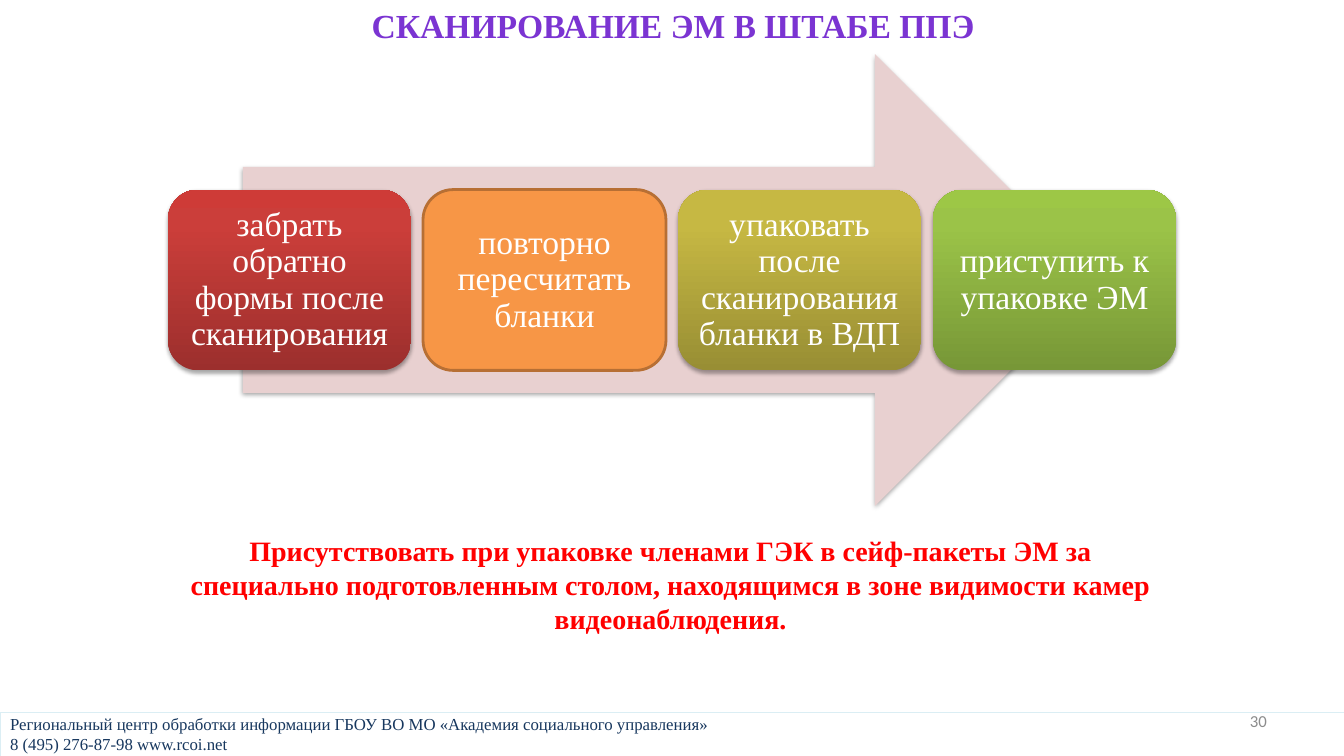
from copy import deepcopy

from lxml import etree
from pptx import Presentation
from pptx.dml.color import RGBColor
from pptx.enum.shapes import MSO_SHAPE
from pptx.enum.text import MSO_ANCHOR, MSO_AUTO_SIZE, PP_ALIGN
from pptx.oxml.ns import qn
from pptx.util import Pt

SLIDE_W, SLIDE_H = 1344, 756
SCALE = 12192000 / SLIDE_W
TITLE_ONLY = 5
RECT, ROUND, ARROW = MSO_SHAPE.RECTANGLE, MSO_SHAPE.ROUNDED_RECTANGLE, MSO_SHAPE.RIGHT_ARROW
LEFT, CENTER, RIGHT = PP_ALIGN.LEFT, PP_ALIGN.CENTER, PP_ALIGN.RIGHT
TOP, MIDDLE = MSO_ANCHOR.TOP, MSO_ANCHOR.MIDDLE
NO_FIT = MSO_AUTO_SIZE.NONE
SERIF = "Times New Roman"
STEPS = [
    ("забрать обратно формы после сканирования", ("9C2F2D", "CB3E3A", "CE3B37")),
    ("повторно пересчитать бланки", None),
    ("упаковать после сканирования бланки в ВДП", ("988E34", "C6B843", "C9BB41")),
    ("приступить к упаковке ЭМ", ("779737", "9BC348", "9DC746")),
]


def px(n):
    """Turn slide pixels into EMU."""
    return round(n * SCALE)


def rgb(value):
    """Turn a hex string into a colour."""
    return RGBColor.from_string(value)


def write(s, text, size=12, color="FFFFFF", font=SERIF, bold=False, align=LEFT,
          anchor=MIDDLE, spacing=1.0, inset=(10, 5)):
    """Fill a shape with one formatted paragraph."""
    tf = s.text_frame
    tf.word_wrap = True
    tf.auto_size = NO_FIT
    tf.vertical_anchor = anchor
    tf.margin_left = tf.margin_right = px(inset[0])
    tf.margin_top = tf.margin_bottom = px(inset[1])
    p = tf.paragraphs[0]
    p.text = text
    p.alignment = align
    p.line_spacing = spacing
    for r in p.runs:
        r.font.name = font
        r.font.size = Pt(size)
        r.font.bold = bold
        r.font.color.rgb = rgb(color)


def add_text(slide, box, text, **fmt):
    """Add a text box with formatted text."""
    write(slide.shapes.add_textbox(*map(px, box)), text, **fmt)


def add_shape(slide, kind, box, fill=None, line=None, width=1):
    """Add a preset shape with a plain fill and an optional line."""
    s = slide.shapes.add_shape(kind, *map(px, box))
    s.shadow.inherit = False
    if fill:
        s.fill.solid()
        s.fill.fore_color.rgb = rgb(fill)
    if line:
        s.line.color.rgb = rgb(line)
        s.line.width = Pt(width)
    else:
        s.line.fill.background()
    return s


def add_alpha(color_element, percent):
    """Make a colour element partly transparent."""
    etree.SubElement(color_element, qn("a:alpha"), val=str(percent * 1000))


def add_shadow(s):
    """Give a shape a soft shadow below it."""
    effects = s._element.spPr.find(qn("a:effectLst"))
    shadow = etree.SubElement(effects, qn("a:outerShdw"), blurRad=str(Pt(3.1)),
                              dist=str(Pt(1.8)), dir="5400000", rotWithShape="0")
    add_alpha(etree.SubElement(shadow, qn("a:srgbClr"), val="000000"), 35)


def fill_gradient(s, colors):
    """Fill a shape with three colours from bottom to top."""
    s.fill.gradient()
    s.fill.gradient_angle = 90
    stops = s._element.spPr.find(".//" + qn("a:gsLst"))
    stops.append(deepcopy(stops[0]))
    for stop, color, position in zip(s.fill.gradient_stops, colors, (0, 0.8, 1)):
        stop.color.rgb = rgb(color)
        stop.position = position


def add_footer(slide, x, y, w, h):
    """Place the contact strip and the page number."""
    s = add_shape(slide, RECT, (x, y, w, h), "FFFFFF", "DBEEF4", 0.5)
    add_alpha(s._element.spPr.find(qn("a:solidFill"))[0], 54)
    write(s, "Региональный центр обработки информации ГБОУ ВО МО «Академия социального "
             "управления»\v8 (495) 276-87-98 www.rcoi.net", color="17375E")
    add_text(slide, (x + 964, y - 11, 313, 40), "30", color="8C8C8C",
             font="Calibri", align=RIGHT)


def add_process(slide, x, y, w, h):
    """Place the row of steps over a wide arrow."""
    add_shadow(add_shape(slide, ARROW, (x + 75, y, w - 150, h), "E8D0D0"))
    gap = 12
    card_w = (w - gap * (len(STEPS) - 1)) / len(STEPS)
    card_h = h * 0.4
    for i, (text, colors) in enumerate(STEPS):
        box = (x + i * (card_w + gap), y + (h - card_h) / 2, card_w, card_h)
        if colors:
            s = add_shape(slide, ROUND, box)
            fill_gradient(s, colors)
            add_shadow(s)
        else:
            s = add_shape(slide, ROUND, box, "F79646", "B76F34", 2)
        write(s, text, size=24, align=CENTER, spacing=0.9, inset=(10, 10))


def add_title(slide, x, y, w, h):
    """Move and format the title placeholder."""
    s = slide.shapes.title
    s.left, s.top, s.width, s.height = map(px, (x, y, w, h))
    write(s, "СКАНИРОВАНИЕ ЭМ В ШТАБЕ ППЭ", size=24, color="7B34D2", bold=True,
          align=CENTER, anchor=TOP)


def main():
    """Build the slide and save it."""
    prs = Presentation()
    prs.slide_width, prs.slide_height = px(SLIDE_W), px(SLIDE_H)
    slide = prs.slides.add_slide(prs.slide_layouts[TITLE_ONLY])
    add_footer(slide, 0, 712, SLIDE_W, 44)
    add_process(slide, 168, 54, 1008, 452)
    add_title(slide, 169, 0, 1008, 50)
    add_text(slide, (167, 529, 1007, 112),
             "Присутствовать при упаковке членами ГЭК в сейф-пакеты ЭМ за специально "
             "подготовленным столом, находящимся в зоне видимости камер видеонаблюдения.",
             size=20, color="FF0000", bold=True, align=CENTER, anchor=TOP)
    prs.save("out.pptx")


if __name__ == "__main__":
    main()
